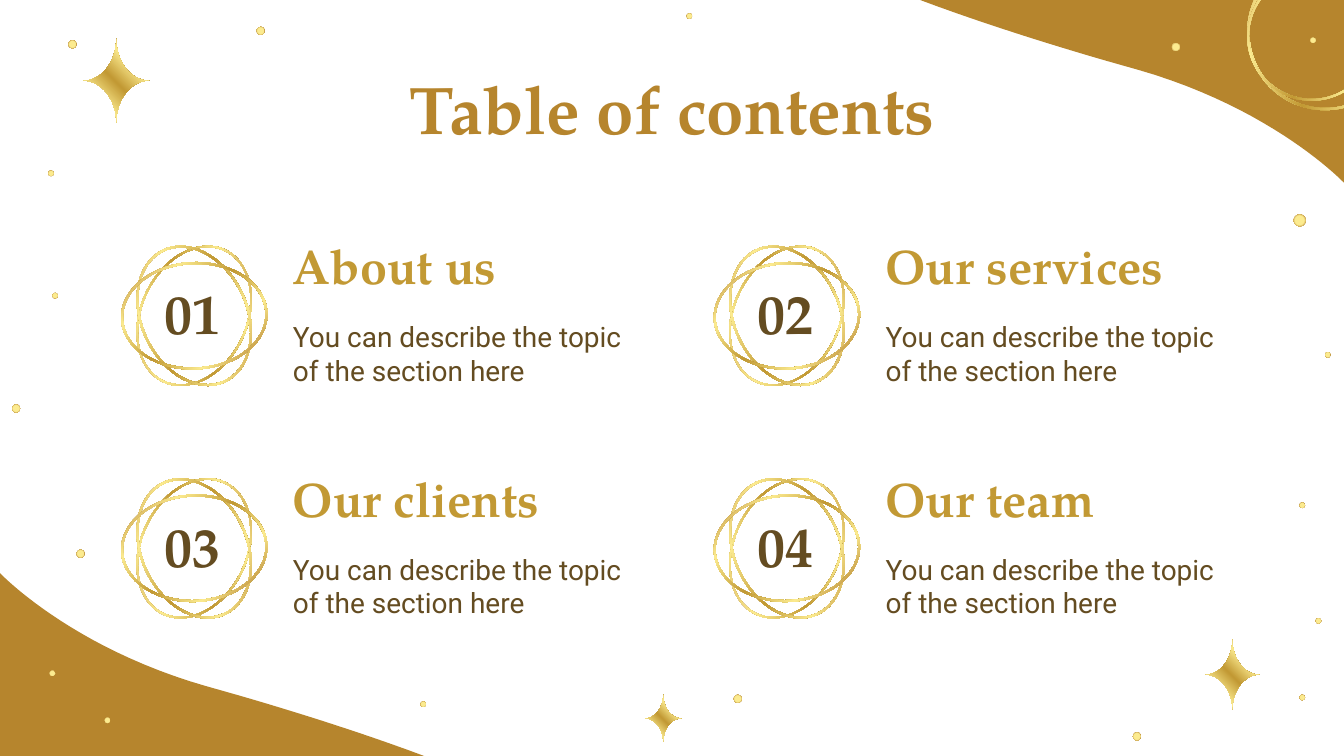
from lxml import etree
from pptx import Presentation
from pptx.dml.color import RGBColor
from pptx.enum.shapes import MSO_SHAPE as Kind
from pptx.enum.text import MSO_ANCHOR as Anchor, MSO_AUTO_SIZE as Fit, PP_ALIGN as Align
from pptx.oxml.ns import qn
from pptx.util import Inches, Pt

WIDE = 10
HIGH = WIDE * 9 / 16
SERIF, SANS = "TeX Gyre Pagella", "Roboto"
GOLD, SAND, BROWN = "B6852D", "C29934", "644C21"
BAND = [(0, "B88532"), (9, "C99F4A"), (25, "FCEB8F"), (49, "C29934"),
        (72, "FCEB8F"), (86, "C99F4A"), (100, "B88532")]
GLOW = [(0, "FCEB8F"), (21, "FCEB8F"), (52, "FCEB8F"), (79, "C99F4A"),
        (100, "C29934")]

# Centre of each dot, grouped by diameter
DOTS = {
    0.06: [(0.12, 3.04), (5.49, 5.2), (0.6, 4.12), (1.94, 0.23), (0.54, 0.33),
           (8.75, 0.35), (8.46, 5.48)],
    0.09: [(9.67, 1.64)],
    0.04: [(0.39, 5.01), (9.77, 0.3), (0.41, 2.2), (0.38, 1.29), (0.8, 5.36),
           (3.15, 5.24), (9.81, 4.62), (9.69, 5.19), (9.69, 3.76), (9.88, 2.64),
           (5.13, 0.12)],
}
STARS = [(0.62, 0.29, 0.49, 0.62), (8.97, 4.76, 0.4, 0.52), (4.8, 5.17, 0.27, 0.35)]
TOPICS = ["About us", "Our services", "Our clients", "Our team"]
NOTE = "You can describe the topic of the section here"


def rgb(code):
    return RGBColor.from_string(code)


def plain(shape):
    shape.shadow.inherit = False
    shape.line.fill.background()
    return shape


def grade(shape, stops, angle=None):
    """Fill with a linear gradient, or a round one when no angle is given."""
    plain(shape).fill.gradient()
    grad = shape._element.spPr.find(qn("a:gradFill"))
    for child in list(grad):
        grad.remove(child)
    grad.set("rotWithShape", "1")
    row = etree.SubElement(grad, qn("a:gsLst"))
    for pos, code in stops:
        stop = etree.SubElement(row, qn("a:gs"), pos=str(pos * 1000))
        etree.SubElement(stop, qn("a:srgbClr"), val=code)
    if angle is None:
        way = etree.SubElement(grad, qn("a:path"), path="circle")
        etree.SubElement(way, qn("a:fillToRect"),
                         {side: "50000" for side in "ltrb"})
    else:
        etree.SubElement(grad, qn("a:lin"), ang=str(angle * 60000), scaled="0")


def bend(a, b, c, d, steps=24):
    """Points along a cubic curve, without its start."""
    for i in range(1, steps + 1):
        t = i / steps
        u = 1 - t
        yield tuple(u**3 * p + 3 * u * u * t * q + 3 * u * t * t * r + t**3 * s
                    for p, q, r, s in zip(a, b, c, d))


def outline(slide, points):
    spots = [(Inches(x), Inches(y)) for x, y in points]
    pen = slide.shapes.build_freeform(*spots[0])
    pen.add_line_segments(spots[1:], close=True)
    return plain(pen.convert_to_shape())


def corner(slide, turned):
    """Wave in the top right corner, or turned round to the bottom left."""
    start, mid, end = (6.82, -0.01), (8.47, 0.52), (WIDE, 1.36)
    points = [start, *bend(start, start, (7.46, 0.24), mid),
              *bend(mid, (9.48, 0.81), end, end), (WIDE, -0.01)]
    if turned:
        points = [(WIDE - x, HIGH - y) for x, y in points]
    wave = outline(slide, points)
    wave.fill.solid()
    wave.fill.fore_color.rgb = rgb(GOLD)


def star(slide, x, y, w, h):
    cx, cy = x + w / 2, y + h / 2
    tips = [(cx, y), (x, cy), (cx, y + h), (x + w, cy)]

    def pull(tip):
        return tip[0] + 0.55 * (cx - tip[0]), tip[1] + 0.55 * (cy - tip[1])

    points = [tips[0]]
    for a, b in zip(tips, tips[1:] + tips[:1]):
        points += bend(a, pull(a), pull(b), b)
    grade(outline(slide, points), BAND, 315)


def dot(slide, cx, cy, size):
    spot = slide.shapes.add_shape(Kind.OVAL, Inches(cx - size / 2),
                                  Inches(cy - size / 2), Inches(size), Inches(size))
    grade(spot, GLOW)


def ring(slide, x, y, w, h, turn, thick, flip=False):
    hoop = slide.shapes.add_shape(Kind.DONUT, Inches(x), Inches(y),
                                  Inches(w), Inches(h))
    hoop.adjustments[0] = thick
    hoop.rotation = turn
    if flip:
        hoop._element.spPr.xfrm.set("flipH", "1")
    grade(hoop, BAND, 45)


def write(shape, box, text, size, font, color, bold=True, align=Align.LEFT,
          anchor=Anchor.MIDDLE):
    shape.left, shape.top, shape.width, shape.height = map(Inches, box)
    frame = shape.text_frame
    frame.word_wrap, frame.auto_size = True, Fit.NONE
    frame.vertical_anchor = anchor
    frame.margin_left = frame.margin_right = Inches(0.1)
    frame.margin_top = frame.margin_bottom = Inches(0.1)
    para = frame.paragraphs[0]
    para.alignment, para.space_before = align, Pt(0)
    props = para._p.get_or_add_pPr()
    props.set("marL", "0")
    props.set("indent", "0")
    etree.SubElement(props, qn("a:buNone"))
    run = para.add_run()
    run.text = text
    run.font.name, run.font.size, run.font.bold = font, Pt(size), bold
    run.font.color.rgb = rgb(color)


def topic(slide, x, y, num, name, body):
    """Numbered rings with a heading and a note beside them."""
    def label():
        return slide.shapes.add_textbox(0, 0, 0, 0)

    write(label(), (x + 1.18, y - 0.24, 2.66, 0.53), name, 26, SERIF, SAND)
    write(body, (x + 1.18, y + 0.3, 2.66, 0.76), NOTE, 15, SANS, BROWN, bold=False)
    write(label(), (x + 0.07, y + 0.11, 0.93, 0.53), f"{num:02}", 30, SERIF, BROWN,
          align=Align.CENTER)
    for turn, thick, flip in [(295.1, 0.015, False), (244.9, 0.018, True),
                              (357.6, 0.019, False)]:
        ring(slide, x, y, 1.09, 0.8, turn, thick, flip)


def decor(slide):
    for turned in (False, True):
        corner(slide, turned)
    for size, spots in DOTS.items():
        for cx, cy in spots:
            dot(slide, cx, cy, size)
    ring(slide, 9.28, -0.34, 1.16, 1.16, 330.4, 0.014)
    ring(slide, 9.28, -0.21, 0.96, 0.96, 330.4, 0.014)
    for box in STARS:
        star(slide, *box)


def main():
    deck = Presentation()
    deck.slide_width, deck.slide_height = Inches(WIDE), Inches(HIGH)
    layout = deck.slide_layouts.get_by_name("Comparison")
    slide = deck.slides.add_slide(layout)
    slide.background.fill.solid()
    slide.background.fill.fore_color.rgb = rgb("FFFFFF")
    title, *bodies = slide.placeholders
    decor(slide)
    write(title, (0.78, 0.4, 8.44, 0.63), "Table of contents", 36, SERIF, GOLD,
          align=Align.CENTER, anchor=Anchor.TOP)
    for i, (name, body) in enumerate(zip(TOPICS, bodies)):
        row, col = divmod(i, 2)
        topic(slide, 0.9 + 4.41 * col, 1.95 + 1.73 * row, i + 1, name, body)
    deck.save("out.pptx")


if __name__ == "__main__":
    main()
